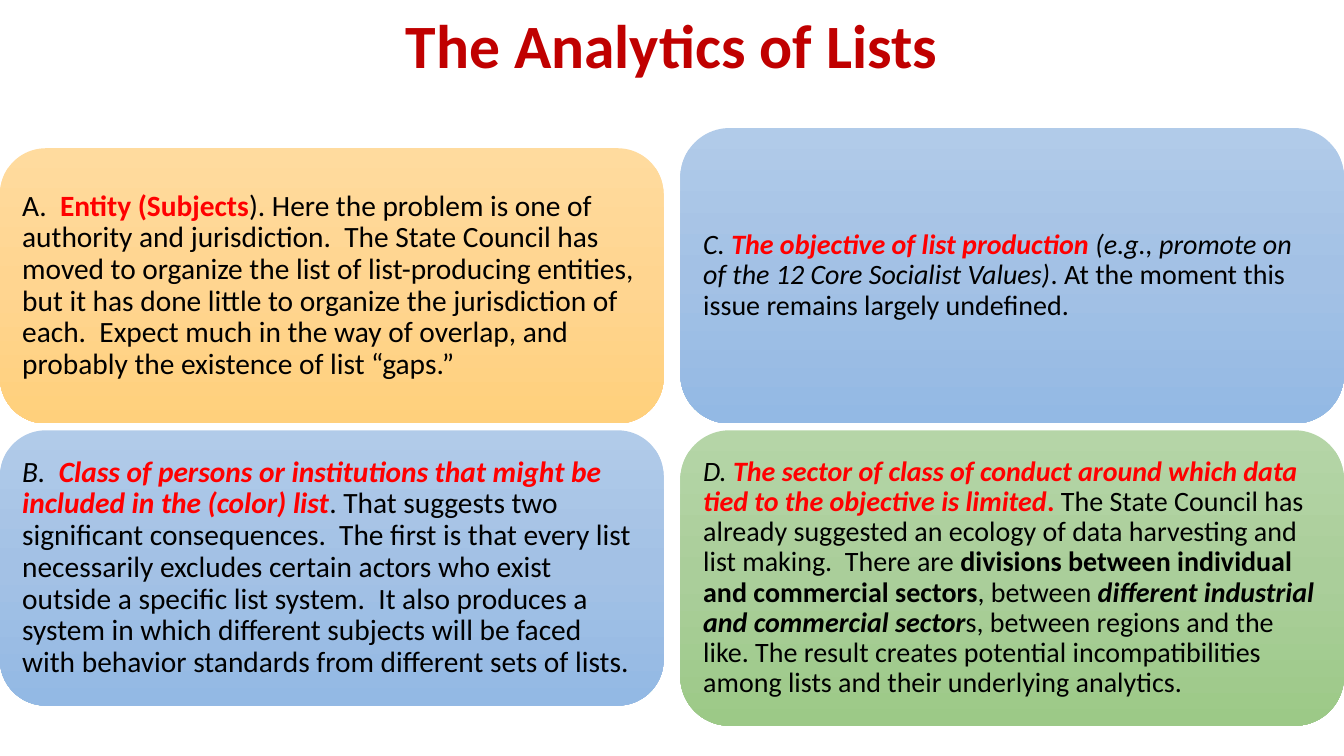
from copy import deepcopy

from pptx import Presentation
from pptx.dml.color import RGBColor
from pptx.enum.shapes import MSO_SHAPE as Shape
from pptx.enum.text import MSO_ANCHOR as Anchor, PP_ALIGN as Align
from pptx.oxml.ns import qn
from pptx.util import Pt

BLACK = RGBColor(0x00, 0x00, 0x00)
RED = RGBColor(0xFF, 0x00, 0x00)
DARK_RED = RGBColor(0xC0, 0x00, 0x00)
ORANGES = [RGBColor(0xFF, 0xDB, 0x9E), RGBColor(0xFF, 0xD5, 0x90), RGBColor(0xFF, 0xD0, 0x7C)]
BLUES = [RGBColor(0xB1, 0xCB, 0xE9), RGBColor(0xA3, 0xC1, 0xE5), RGBColor(0x93, 0xB9, 0xE4)]
GREENS = [RGBColor(0xB5, 0xD5, 0xA7), RGBColor(0xAA, 0xCE, 0x9A), RGBColor(0x9C, 0xC9, 0x87)]

FONT = "Calibri"
CARD_WIDTH = 474
ROW_GAP = 4.9
LOWER_TOP = 307.4

# Each run: text, colour, bold, italic
ENTITY = [
    ("A.  ", BLACK, False, False),
    ("Entity (Subjects", RED, True, False),
    ("). Here the problem is one of authority and jurisdiction.  The State Council has moved "
     "to organize the list of list-producing entities, but it has done little to organize the "
     "jurisdiction of each.  Expect much in the way of overlap, and probably the existence of "
     "list “gaps.”", BLACK, False, False),
]
CLASS = [
    ("B.  ", BLACK, False, True),
    ("Class of persons or institutions that might be included in the (color) list",
     RED, True, True),
    (". That suggests two significant consequences.  The first is that every list necessarily "
     "excludes certain actors who exist outside a specific list system.  It also produces a "
     "system in which different subjects will be faced with behavior standards from different "
     "sets of lists.", BLACK, False, False),
]
OBJECTIVE = [
    ("C. ", BLACK, False, True),
    ("The objective of list production ", RED, True, True),
    ("(e.g., promote on of the 12 Core Socialist Values)", BLACK, False, True),
    (". At the moment this issue remains largely undefined.", BLACK, False, False),
]
SECTOR = [
    ("D. ", BLACK, False, True),
    ("The sector of class of conduct around which data tied to the objective is limited",
     RED, True, True),
    (". ", RED, True, False),
    ("The State Council has already suggested an ecology of data harvesting and list making.  "
     "There are ", BLACK, False, False),
    ("divisions between individual and commercial sectors", BLACK, True, False),
    (", between ", BLACK, False, False),
    ("different industrial and commercial sector", BLACK, True, True),
    ("s, between regions and the like. The result creates potential incompatibilities among "
     "lists and their underlying analytics.", BLACK, False, False),
]

# Each column: left, card height, text size, inset, cards from top to bottom
COLUMNS = [
    (0, 196.6, 21, 6.3, [(ORANGES, ENTITY), (BLUES, CLASS)]),
    (486, 211, 20, 6, [(BLUES, OBJECTIVE), (GREENS, SECTOR)]),
]


def fill_downward(shape, colours):
    """Fill the shape with a three-stop gradient running from top to bottom."""
    shape.fill.gradient()
    shape.fill.gradient_angle = 270
    stop_list = shape._element.spPr.find(".//" + qn("a:gsLst"))
    stop_list.insert(1, deepcopy(stop_list[0]))
    for stop, colour, position in zip(shape.fill.gradient_stops, colours, (0, 0.5, 1)):
        stop.color.rgb = colour
        stop.position = position


deck = Presentation()
deck.slide_width, deck.slide_height = Pt(960), Pt(540)
slide = deck.slides.add_slide(deck.slide_layouts[5])

title = slide.shapes.title
title.left, title.top, title.width, title.height = Pt(66), Pt(0), Pt(828), Pt(70)
title.text_frame.text = "The Analytics of Lists"
title.text_frame.vertical_anchor = Anchor.MIDDLE
para = title.text_frame.paragraphs[0]
para.alignment = Align.CENTER
para.line_spacing = 0.9
para.font.name, para.font.size, para.font.bold = FONT, Pt(44), True
para.font.color.rgb = DARK_RED

for left, height, size, inset, cards in COLUMNS:
    for row, (colours, runs) in enumerate(cards):
        top = LOWER_TOP - (1 - row) * (height + ROW_GAP)
        card = slide.shapes.add_shape(
            Shape.ROUNDED_RECTANGLE, Pt(left), Pt(top), Pt(CARD_WIDTH), Pt(height))
        card.shadow.inherit = False
        card.line.fill.background()
        fill_downward(card, colours)

        frame = card.text_frame
        frame.word_wrap = True
        frame.vertical_anchor = Anchor.MIDDLE
        frame.margin_left = frame.margin_right = Pt(inset)
        frame.margin_top = frame.margin_bottom = Pt(inset)
        para = frame.paragraphs[0]
        para.alignment = Align.LEFT
        para.line_spacing = 0.9
        para.font.name, para.font.size = FONT, Pt(size)
        for text, colour, bold, italic in runs:
            span = para.add_run()
            span.text = text
            span.font.color.rgb = colour
            span.font.bold, span.font.italic = bold, italic

deck.save("out.pptx")
